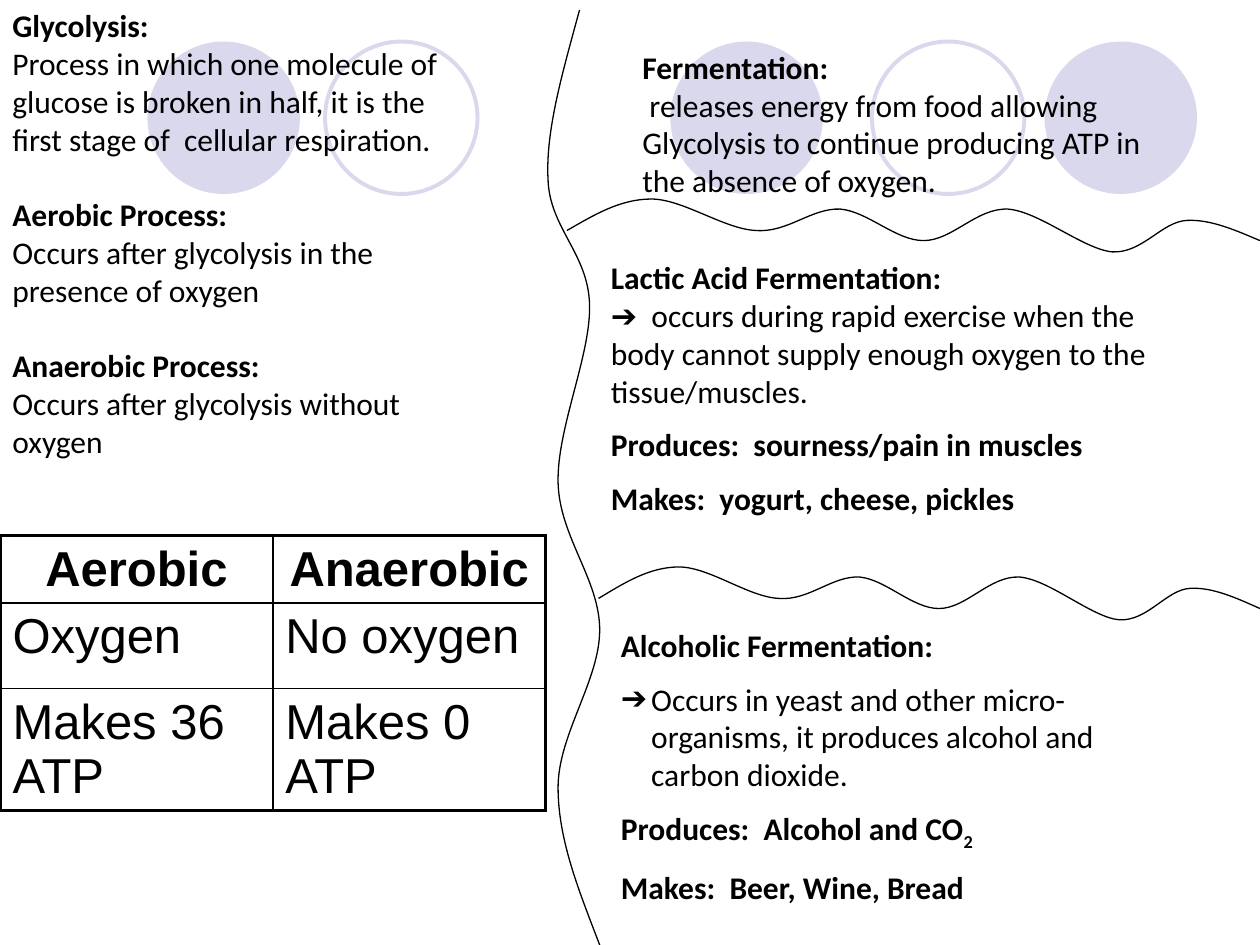
from lxml.etree import SubElement
from pptx import Presentation
from pptx.dml.color import RGBColor
from pptx.enum.shapes import MSO_SHAPE
from pptx.enum.text import MSO_AUTO_SIZE, PP_ALIGN
from pptx.oxml.ns import qn
from pptx.util import Inches, Pt

BLACK = RGBColor(0, 0, 0)
LILAC = RGBColor(0xD9, 0xD8, 0xEC)

# Each curve lists its start, then two control points and an end per segment.
DIVIDER = [
    (4.6, 0.08),
    (4.47, 0.56), (4.33, 1.03), (4.35, 1.42),
    (4.36, 1.81), (4.67, 2.01), (4.68, 2.42),
    (4.69, 2.82), (4.42, 3.4), (4.43, 3.83),
    (4.44, 4.26), (4.76, 4.6), (4.76, 5),
    (4.76, 5.4), (4.43, 5.83), (4.43, 6.25),
    (4.43, 6.67), (4.6, 7.08), (4.76, 7.5),
]
WAVE_WIDTH = 5.5
WAVE = [
    (0, 0.25),
    (0.21, 0.13), (0.42, 0), (0.67, 0),
    (0.92, 0), (1.25, 0.24), (1.5, 0.25),
    (1.75, 0.27), (1.94, 0.07), (2.17, 0.08),
    (2.39, 0.1), (2.61, 0.33), (2.83, 0.33),
    (3.06, 0.33), (3.25, 0.07), (3.5, 0.08),
    (3.75, 0.1), (4.1, 0.4), (4.33, 0.42),
    (4.57, 0.43), (4.72, 0.18), (4.92, 0.17),
    (5.11, 0.16), (5.31, 0.25), (5.5, 0.33),
]


def add_text(p, text, font="Calibri", size=18, bold=False, baseline=0):
    """Add text to a paragraph; a newline becomes a line break."""
    for i, line in enumerate(text.split("\n")):
        if i:
            p.add_line_break()
        if not line:
            continue
        r = p.add_run()
        r.text = line
        r.font.name = font
        r.font.size = Pt(size)
        r.font.bold = bold
        r.font.color.rgb = BLACK
        if baseline:
            r.font._element.set("baseline", str(baseline * 1000))


def add_arrow_bullet(p, indent):
    pPr = p._p.get_or_add_pPr()
    pPr.set("marL", str(indent))
    pPr.set("indent", str(-indent))
    SubElement(pPr, qn("a:buFont")).set("typeface", "Calibri")
    SubElement(pPr, qn("a:buChar")).set("char", "➔")


def add_notes_box(s, left, top, width, height, gap=9):
    """Return a function that adds a paragraph to a new text box."""
    sp = s.shapes.add_textbox(Inches(left), Inches(top), Inches(width), Inches(height))
    tf = sp.text_frame
    tf.word_wrap = True
    tf.auto_size = MSO_AUTO_SIZE.SHAPE_TO_FIT_TEXT
    unused = [tf.paragraphs[0]]

    def add(text, bold=False, space=gap):
        if unused:
            p = unused.pop()
        else:
            p = tf.add_paragraph()
            p.space_before = Pt(space)
        add_text(p, text, bold=bold)
        return p

    return add


def add_circles(s, top, diameter):
    for left, filled in [(5.32, True), (8.29, True), (1.17, True), (6.92, False), (2.58, False)]:
        sp = s.shapes.add_shape(MSO_SHAPE.OVAL, Inches(left), Inches(top),
                                Inches(diameter), Inches(diameter))
        sp.shadow.inherit = False
        if filled:
            sp.fill.solid()
            sp.fill.fore_color.rgb = LILAC
            sp.line.fill.background()
        else:
            sp.fill.background()
            sp.line.color.rgb = LILAC
            sp.line.width = Pt(2.25)


def add_curve(s, points):
    """Draw a smooth open line through points given in inches."""
    start, *rest = [(Inches(x), Inches(y)) for x, y in points]
    builder = s.shapes.build_freeform(*start)
    builder.add_line_segments(rest, close=False)
    sp = builder.convert_to_shape()
    outline = sp._element.find(".//" + qn("a:path"))
    segments = outline.findall(qn("a:lnTo"))
    for i in range(0, len(segments), 3):
        bezier = SubElement(outline, qn("a:cubicBezTo"))
        for segment in segments[i:i + 3]:
            bezier.append(segment[0])
            outline.remove(segment)
    sp.shadow.inherit = False
    sp.fill.background()
    sp.line.color.rgb = BLACK
    sp.line.width = Pt(0.75)


def add_wave(s, left, top, width):
    scale = width / WAVE_WIDTH
    add_curve(s, [(left + x * scale, top + y) for x, y in WAVE])


def set_border(cell, side, width):
    ln = SubElement(cell._tc.get_or_add_tcPr(), qn("a:" + side))
    ln.set("w", str(Pt(width)))
    fill = SubElement(ln, qn("a:solidFill"))
    SubElement(fill, qn("a:srgbClr")).set("val", str(BLACK))


def add_comparison_table(s, left, top, width, row_heights):
    rows = [("Aerobic", "Anaerobic"), ("Oxygen", "No oxygen"), ("Makes 36 ATP", "Makes 0 ATP")]
    frame = s.shapes.add_table(len(rows), 2, Inches(left), Inches(top),
                               Inches(width), Inches(sum(row_heights)))
    table = frame.table
    table.first_row = table.horz_banding = False
    for i, (texts, height) in enumerate(zip(rows, row_heights)):
        table.rows[i].height = Inches(height)
        for j, text in enumerate(texts):
            cell = table.cell(i, j)
            p = cell.text_frame.paragraphs[0]
            p.alignment = PP_ALIGN.LEFT if i else PP_ALIGN.CENTER
            add_text(p, text, font="Arial", size=28, bold=i == 0)
            outer = {"lnL": j == 0, "lnR": j == 1, "lnT": i == 0, "lnB": i == len(rows) - 1}
            for side, is_outer in outer.items():
                set_border(cell, side, 2.25 if is_outer else 1)
            cell.fill.background()


def add_fermentation(s, *box):
    add = add_notes_box(s, *box)
    p = add("Fermentation:\n", bold=True)
    add_text(p, " releases energy from food allowing Glycolysis to continue "
                "producing ATP in the absence of oxygen.")


def add_lactic_acid(s, *box):
    add = add_notes_box(s, *box)
    p = add("Lactic Acid Fermentation:\n", bold=True)
    add_text(p, "➔  occurs during rapid exercise when the body cannot supply "
                "enough oxygen to the tissue/muscles.")
    add("Produces:  sourness/pain in muscles", bold=True)
    add("Makes:  yogurt, cheese, pickles", bold=True)


def add_alcoholic(s, *box):
    add = add_notes_box(s, *box)
    add("Alcoholic Fermentation:", bold=True)
    p = add("Occurs in yeast and other micro-organisms, it produces alcohol and carbon dioxide.")
    add_arrow_bullet(p, Inches(0.24))
    p = add("Produces:  Alcohol and CO", bold=True)
    add_text(p, "2", bold=True, baseline=-25)
    add("Makes:  Beer, Wine, Bread", bold=True)


def add_processes(s, *box):
    add = add_notes_box(s, *box, gap=0)
    for heading, body in [
        ("Glycolysis:", "Process in which one molecule of glucose is broken in half, "
                        "it is the first stage of  cellular respiration."),
        ("Aerobic Process:", "Occurs after glycolysis in the presence of oxygen"),
        ("Anaerobic Process:", "Occurs after glycolysis without oxygen"),
    ]:
        add(heading, bold=True, space=21.6)
        add(body)


def main():
    prs = Presentation()
    prs.slide_width, prs.slide_height = Inches(10), Inches(7.5)
    s = prs.slides.add_slide(prs.slide_layouts[6])
    add_circles(s, 0.33, 1.21)
    add_curve(s, DIVIDER)
    add_comparison_table(s, 0, 4.25, 4.33, [0.48, 0.68, 0.88])
    add_fermentation(s, 5, 0.33, 4.42, 1.31)
    add_wave(s, 4.5, 1.58, 5.5)
    add_lactic_acid(s, 4.75, 2, 4.67, 2.68)
    add_wave(s, 4.75, 4.5, 5.25)
    add_alcoholic(s, 4.83, 4.92, 4.67, 2.37)
    add_processes(s, 0, 0, 3.92, 4.95)
    prs.save("out.pptx")


if __name__ == "__main__":
    main()
